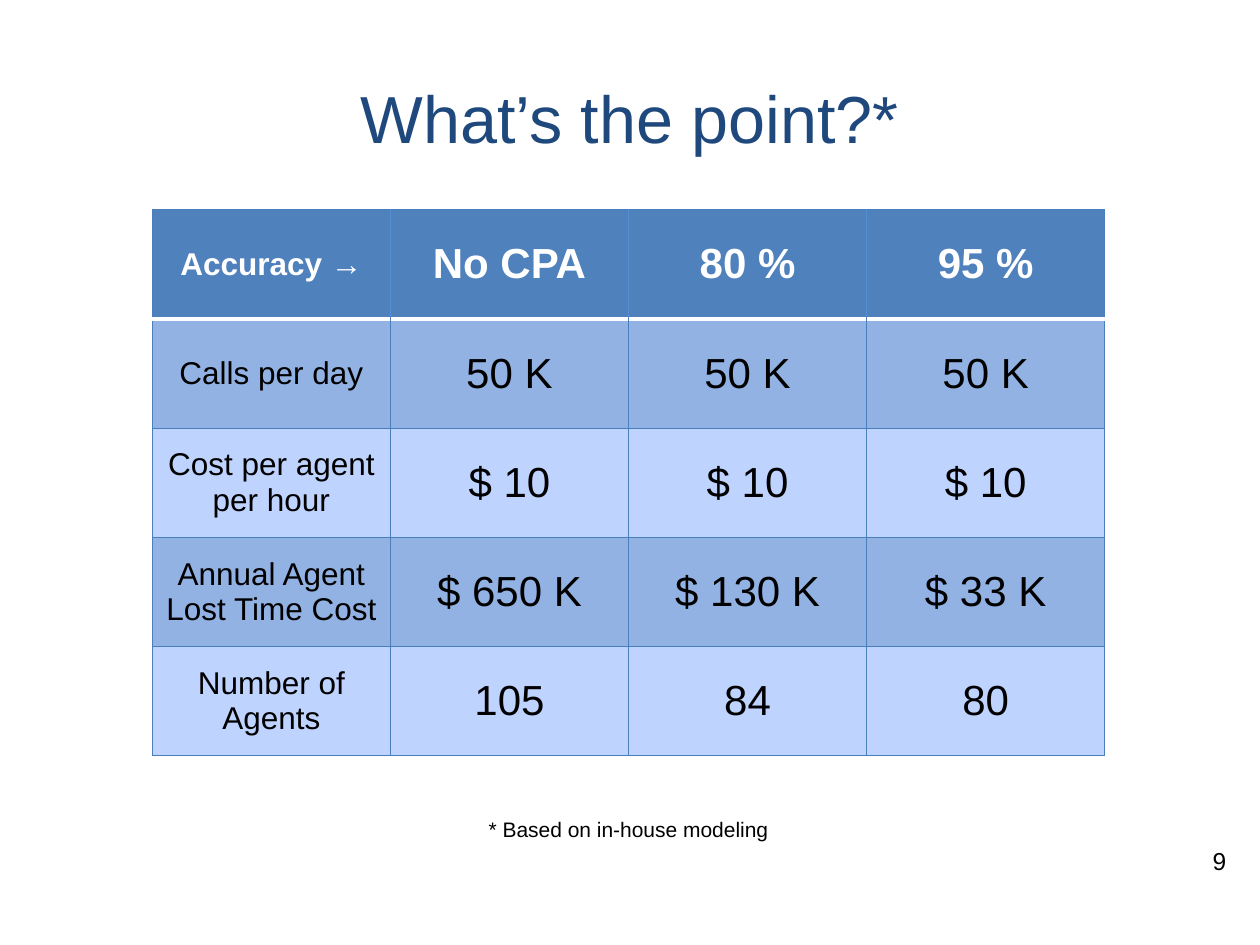
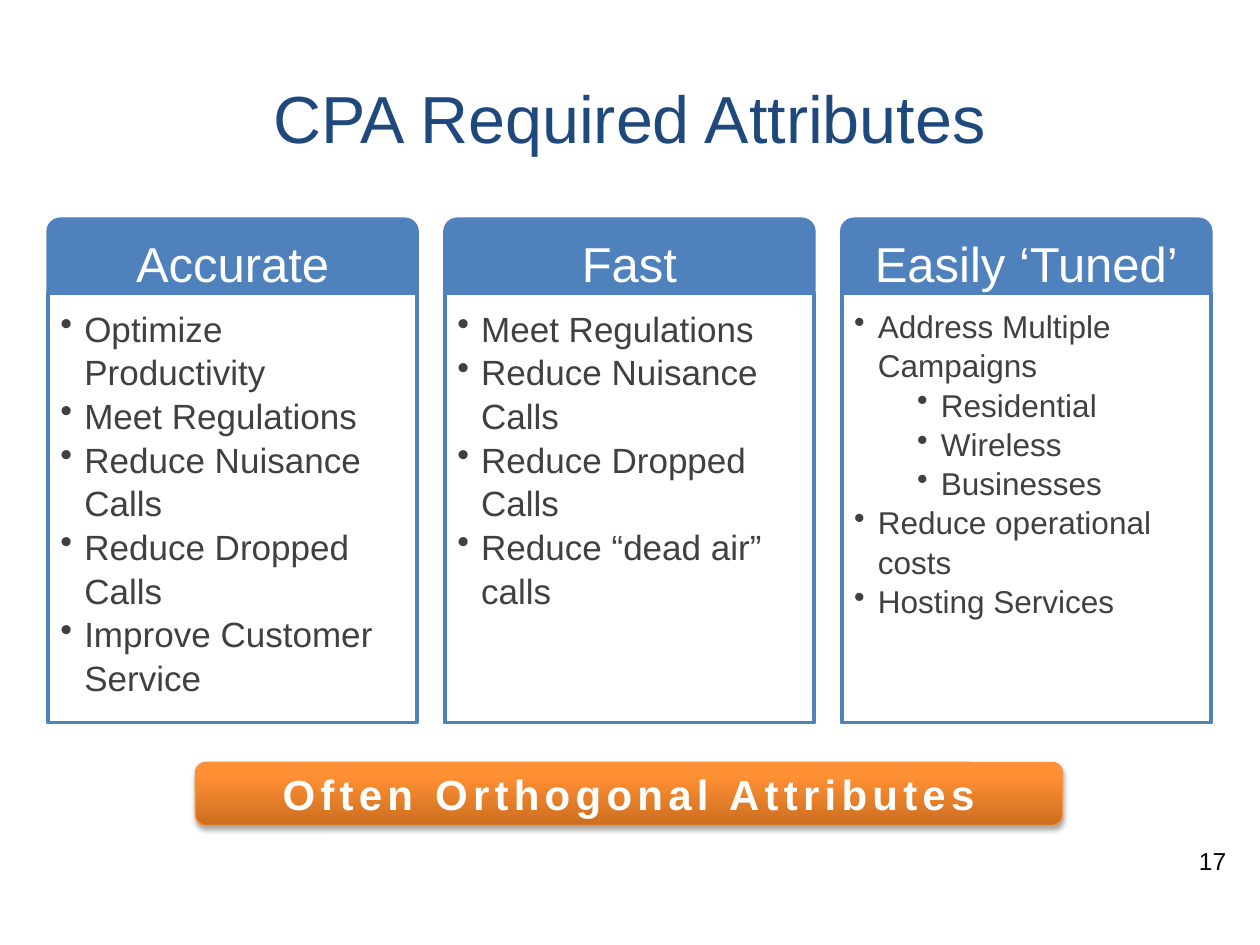
from copy import deepcopy

from lxml.etree import SubElement
from pptx import Presentation
from pptx.dml.color import RGBColor
from pptx.enum.shapes import MSO_SHAPE as Shape
from pptx.enum.text import MSO_ANCHOR as Anchor, PP_ALIGN as Align
from pptx.oxml.ns import qn
from pptx.util import Cm, Pt

MODEL_TITLE = "What’s the point?*"
MODEL_PAGE = "9"
MODEL_ROWS = [
    ("Accuracy →", "No CPA", "80 %", "95 %"),
    ("Calls per day", "50 K", "50 K", "50 K"),
    ("Cost per agent per hour", "$ 10", "$ 10", "$ 10"),
    ("Annual Agent Lost Time Cost", "$ 650 K", "$ 130 K", "$ 33 K"),
    ("Number of Agents", "105", "84", "80"),
]
FOOTNOTE = "* Based on in-house modeling"

ATTRIBUTES_TITLE = "CPA Required Attributes"
ATTRIBUTES_PAGE = "17"
# heading, text size, points as (level, text)
ATTRIBUTES = [
    ("Accurate", 20, [
        (0, "Optimize Productivity"),
        (0, "Meet Regulations"),
        (0, "Reduce Nuisance Calls"),
        (0, "Reduce Dropped Calls"),
        (0, "Improve Customer Service"),
    ]),
    ("Fast", 20, [
        (0, "Meet Regulations"),
        (0, "Reduce Nuisance Calls"),
        (0, "Reduce Dropped Calls"),
        (0, "Reduce “dead air” calls"),
    ]),
    ("Easily ‘Tuned’", 18, [
        (0, "Address Multiple Campaigns"),
        (1, "Residential"),
        (1, "Wireless"),
        (1, "Businesses"),
        (0, "Reduce operational costs"),
        (0, "Hosting Services"),
    ]),
]
BANNER = "Often Orthogonal Attributes"

FONT = "Arial"
WHITE = RGBColor(0xFF, 0xFF, 0xFF)
BLACK = RGBColor(0, 0, 0)
NAVY = RGBColor(0x1F, 0x49, 0x7D)
BLUE = RGBColor(0x4F, 0x81, 0xBD)
GRID_BLUE = RGBColor(0x4B, 0x7E, 0xBC)
HEAD_DIVIDER = RGBColor(0x55, 0x8E, 0xD5)
DARK_BAND = RGBColor(0x93, 0xB2, 0xE4)
LIGHT_BAND = RGBColor(0xBF, 0xD3, 0xFF)
GREY = RGBColor(0x40, 0x40, 0x40)
ORANGE_LINE = RGBColor(0xF6, 0x92, 0x40)
ORANGE_STOPS = [
    (0, RGBColor(0xCC, 0x6E, 0x20)),
    (0.8, RGBColor(0xFF, 0x90, 0x34)),
    (1, RGBColor(0xFF, 0x91, 0x36)),
]


def style(paragraph, size, color, align=Align.LEFT, bold=False):
    paragraph.alignment = align
    font = paragraph.font
    font.name, font.size, font.bold = FONT, Pt(size), bold
    font.color.rgb = color


def add_text(slide, box, text, size, color, align=Align.LEFT,
             anchor=Anchor.TOP, wrap=True):
    frame = slide.shapes.add_textbox(*map(Cm, box)).text_frame
    frame.word_wrap = wrap
    frame.vertical_anchor = anchor
    frame.text = text
    style(frame.paragraphs[0], size, color, align)


def add_panel(slide, kind, box, line_color, line_width):
    panel = slide.shapes.add_shape(kind, *map(Cm, box))
    panel.shadow.inherit = False
    panel.line.color.rgb = line_color
    panel.line.width = Pt(line_width)
    panel.text_frame.word_wrap = True
    return panel


def add_titled_slide(deck, title, page):
    slide = deck.slides.add_slide(deck.slide_layouts[6])
    add_text(slide, (1.27, 0.76, 22.86, 3.18), title, 38, NAVY,
             Align.CENTER, Anchor.MIDDLE)
    add_text(slide, (19.05, 16.94, 5.92, 1.32), page, 14, BLACK, Align.RIGHT)
    return slide


def set_borders(cell, **edges):
    """Draw the edges L, R, T, B, each given as (colour, points)."""
    properties = cell._tc.get_or_add_tcPr()
    for side in "LRTB":
        color, width = edges[side]
        line = SubElement(properties, qn(f"a:ln{side}"), w=str(Pt(width)))
        fill = SubElement(line, qn("a:solidFill"))
        SubElement(fill, qn("a:srgbClr"), val=str(color))


def add_model_table(slide):
    row_count, column_count = len(MODEL_ROWS), len(MODEL_ROWS[0])
    table = slide.shapes.add_table(
        row_count, column_count, Cm(3.07), Cm(4.23),
        Cm(4.8 * column_count), Cm(2.2 * row_count)).table
    grid, divider, rule = (GRID_BLUE, 0.75), (HEAD_DIVIDER, 1), (WHITE, 2)
    for r, values in enumerate(MODEL_ROWS):
        head = r == 0
        inner = divider if head else grid
        for c, value in enumerate(values):
            cell = table.cell(r, c)
            set_borders(cell,
                        L=inner if c else grid,
                        R=inner if c < column_count - 1 else grid,
                        T=rule if r == 1 else grid,
                        B=rule if head else grid)
            cell.fill.solid()
            cell.fill.fore_color.rgb = (
                BLUE if head else DARK_BAND if r % 2 else LIGHT_BAND)
            cell.vertical_anchor = Anchor.MIDDLE
            cell.text = value
            style(cell.text_frame.paragraphs[0], 24 if c else 18,
                  WHITE if head else BLACK, Align.CENTER, head)


def add_bullet(paragraph, level):
    properties = paragraph._p.get_or_add_pPr()
    properties.set("marL", str(Cm(0.48 + 1.27 * level)))
    properties.set("indent", str(Cm(-0.48)))
    SubElement(properties, qn("a:buChar"), char="•")


def add_attribute(slide, left, heading, size, points):
    top, width, head_height, body_height = 4.42, 7.44, 1.49, 8.66
    body = add_panel(slide, Shape.RECTANGLE,
                     (left, top + head_height, width, body_height), BLUE, 2)
    body.fill.solid()
    body.fill.fore_color.rgb = WHITE
    frame = body.text_frame
    frame.vertical_anchor = Anchor.TOP
    frame.margin_top = frame.margin_bottom = Cm(0.25)
    for i, (level, point) in enumerate(points):
        paragraph = frame.add_paragraph() if i else frame.paragraphs[0]
        paragraph.text = point
        paragraph.level = level
        paragraph.line_spacing = 1.04
        add_bullet(paragraph, level)
        style(paragraph, size, GREY)

    head = add_panel(slide, Shape.ROUND_2_SAME_RECTANGLE,
                     (left, top, width, head_height), BLUE, 2)
    head.fill.solid()
    head.fill.fore_color.rgb = BLUE
    frame = head.text_frame
    frame.margin_top, frame.margin_bottom = Cm(0.2), 0
    frame.vertical_anchor = Anchor.MIDDLE
    frame.text = heading
    style(frame.paragraphs[0], 28, WHITE, Align.CENTER)


def add_banner(slide):
    banner = add_panel(slide, Shape.ROUNDED_RECTANGLE,
                       (3.94, 15.37, 17.48, 1.27), ORANGE_LINE, 0.75)
    properties = banner.element.spPr

    banner.fill.gradient()
    banner.fill.gradient_angle = 90
    stops = properties.find(qn("a:gradFill")).find(qn("a:gsLst"))
    stops.append(deepcopy(stops[-1]))
    for stop, (position, color) in zip(banner.fill.gradient_stops, ORANGE_STOPS):
        stop.position = position
        stop.color.rgb = color

    shadow = SubElement(properties.find(qn("a:effectLst")), qn("a:outerShdw"),
                        blurRad=str(Pt(3.1)), dist=str(Pt(1.8)),
                        dir="5400000", rotWithShape="0")
    shade = SubElement(shadow, qn("a:srgbClr"), val=str(BLACK))
    SubElement(shade, qn("a:alpha"), val="35000")

    frame = banner.text_frame
    frame.vertical_anchor = Anchor.MIDDLE
    frame.text = BANNER
    paragraph = frame.paragraphs[0]
    style(paragraph, 24, WHITE, Align.CENTER, True)
    paragraph.runs[0]._r.get_or_add_rPr().set("spc", "300")


def main():
    deck = Presentation()
    deck.slide_width, deck.slide_height = Cm(25.4), Cm(19.05)

    model = add_titled_slide(deck, MODEL_TITLE, MODEL_PAGE)
    add_model_table(model)
    add_text(model, (9.6, 16.33, 6.2, 0.77), FOOTNOTE, 12, BLACK, wrap=False)

    attributes = add_titled_slide(deck, ATTRIBUTES_TITLE, ATTRIBUTES_PAGE)
    for i, attribute in enumerate(ATTRIBUTES):
        add_attribute(attributes, 0.97 + 8 * i, *attribute)
    add_banner(attributes)

    deck.save("out.pptx")


if __name__ == "__main__":
    main()
